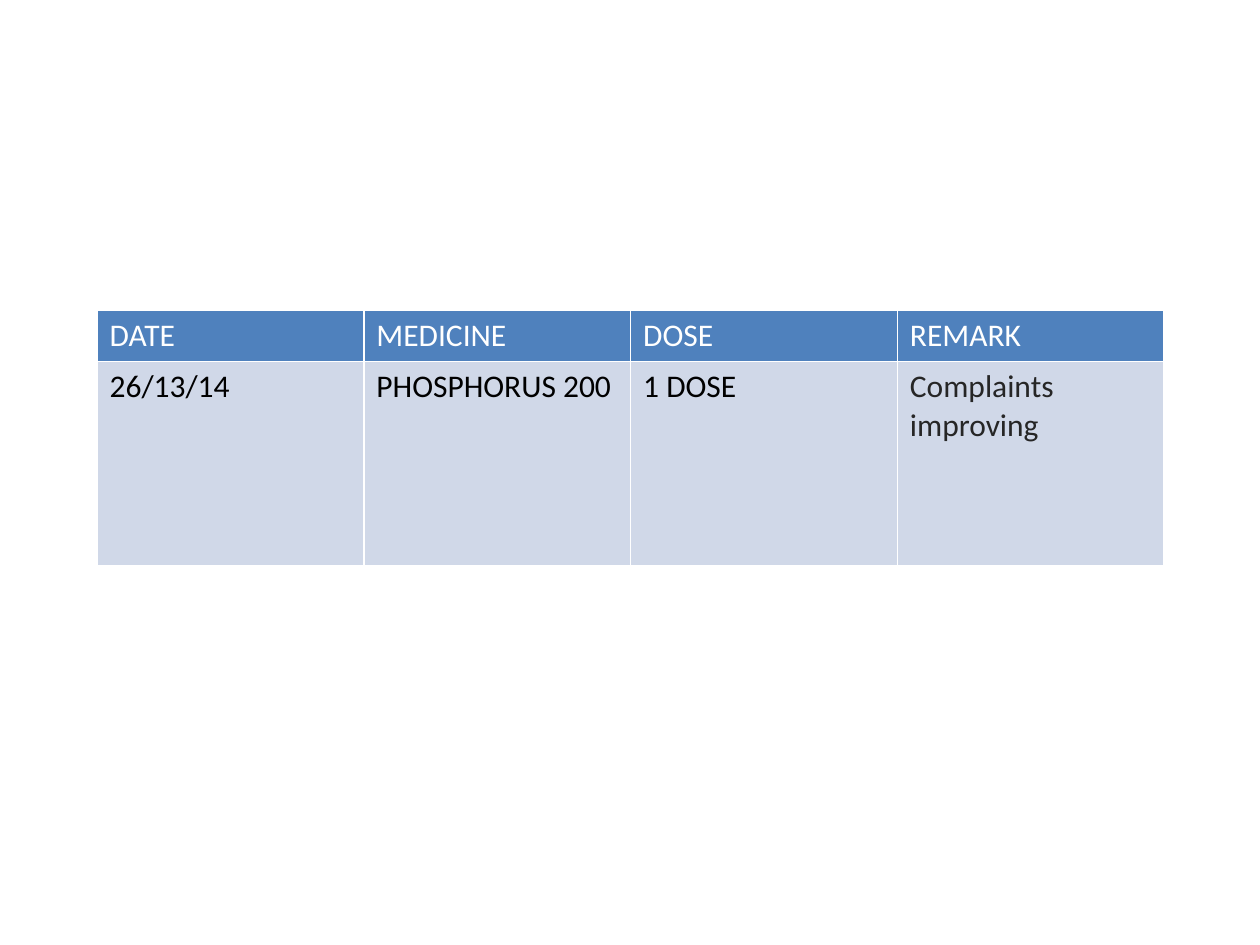
from pptx import Presentation
from pptx.dml.color import RGBColor
from pptx.util import Inches, Pt

WHITE = RGBColor(0xFF, 0xFF, 0xFF)
BLACK = RGBColor(0x00, 0x00, 0x00)
CHARCOAL = RGBColor(0x26, 0x26, 0x26)
HEADER_BLUE = RGBColor(0x4F, 0x81, 0xBD)
PALE_BLUE = RGBColor(0xD0, 0xD8, 0xE8)

# Rows: height, fill, and each cell's text with its colour
ROWS = [
    (0.41, HEADER_BLUE, [("DATE", WHITE), ("MEDICINE", WHITE),
                         ("DOSE", WHITE), ("REMARK", WHITE)]),
    (1.62, PALE_BLUE, [("26/13/14", BLACK), ("PHOSPHORUS 200", BLACK),
                       ("1 DOSE", BLACK), ("Complaints improving", CHARCOAL)]),
]
FONT = {"name": "Calibri", "size": Pt(18), "bold": False}

prs = Presentation()
prs.slide_width, prs.slide_height = Inches(10), Inches(7.5)
slide = prs.slides.add_slide(prs.slide_layouts[6])

# Prescription table; its default style supplies the white borders
prescription = slide.shapes.add_table(
    len(ROWS), 4, Inches(0.77), Inches(2.46), Inches(8.47), Inches(2.03)).table

for row, (height, fill, entries) in enumerate(ROWS):
    prescription.rows[row].height = Inches(height)
    for column, (wording, colour) in enumerate(entries):
        cell = prescription.cell(row, column)
        cell.fill.solid()
        cell.fill.fore_color.rgb = fill
        entry = cell.text_frame.paragraphs[0].add_run()
        entry.text = wording
        entry.font.color.rgb = colour
        for attribute, value in FONT.items():
            setattr(entry.font, attribute, value)

prs.save("out.pptx")
